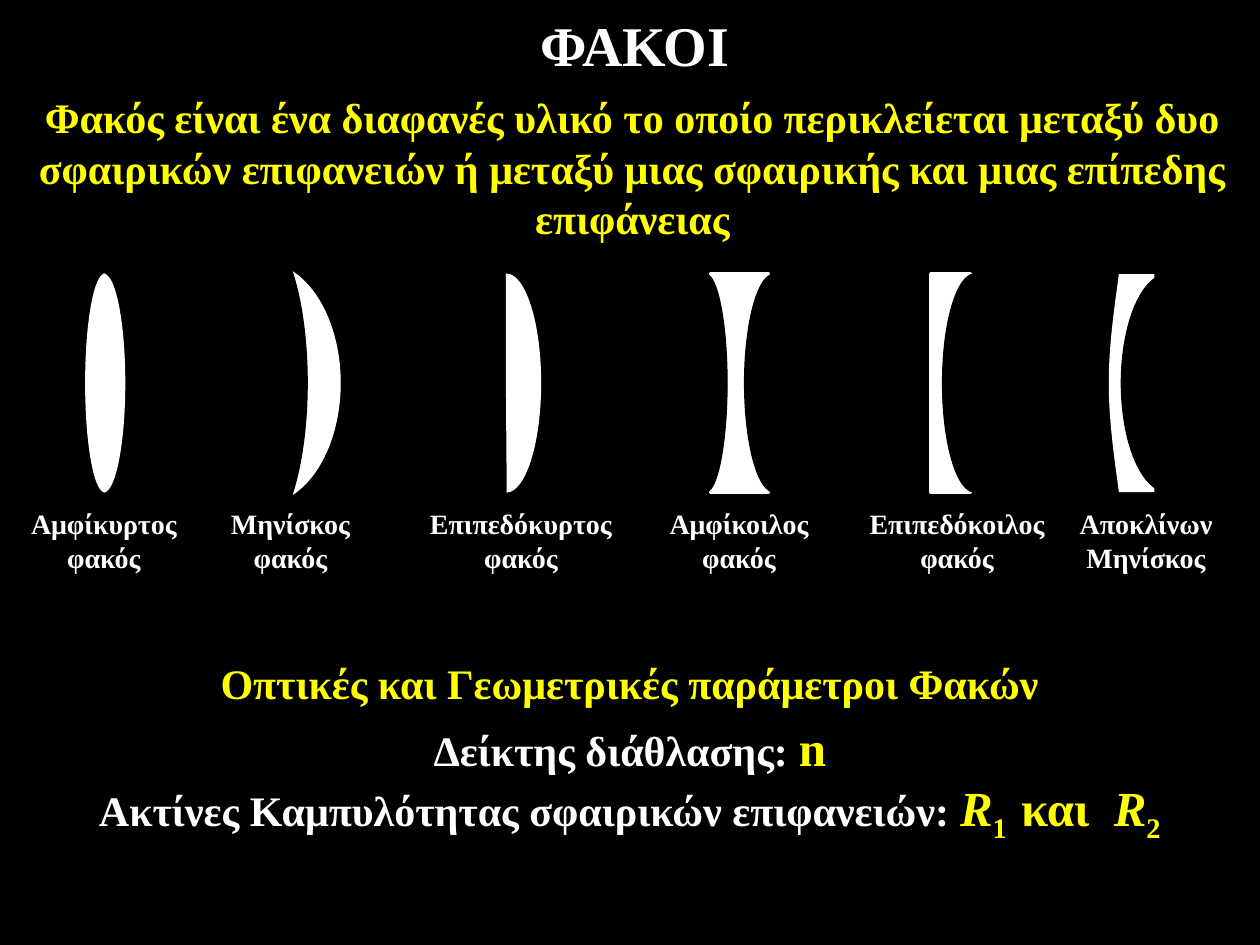
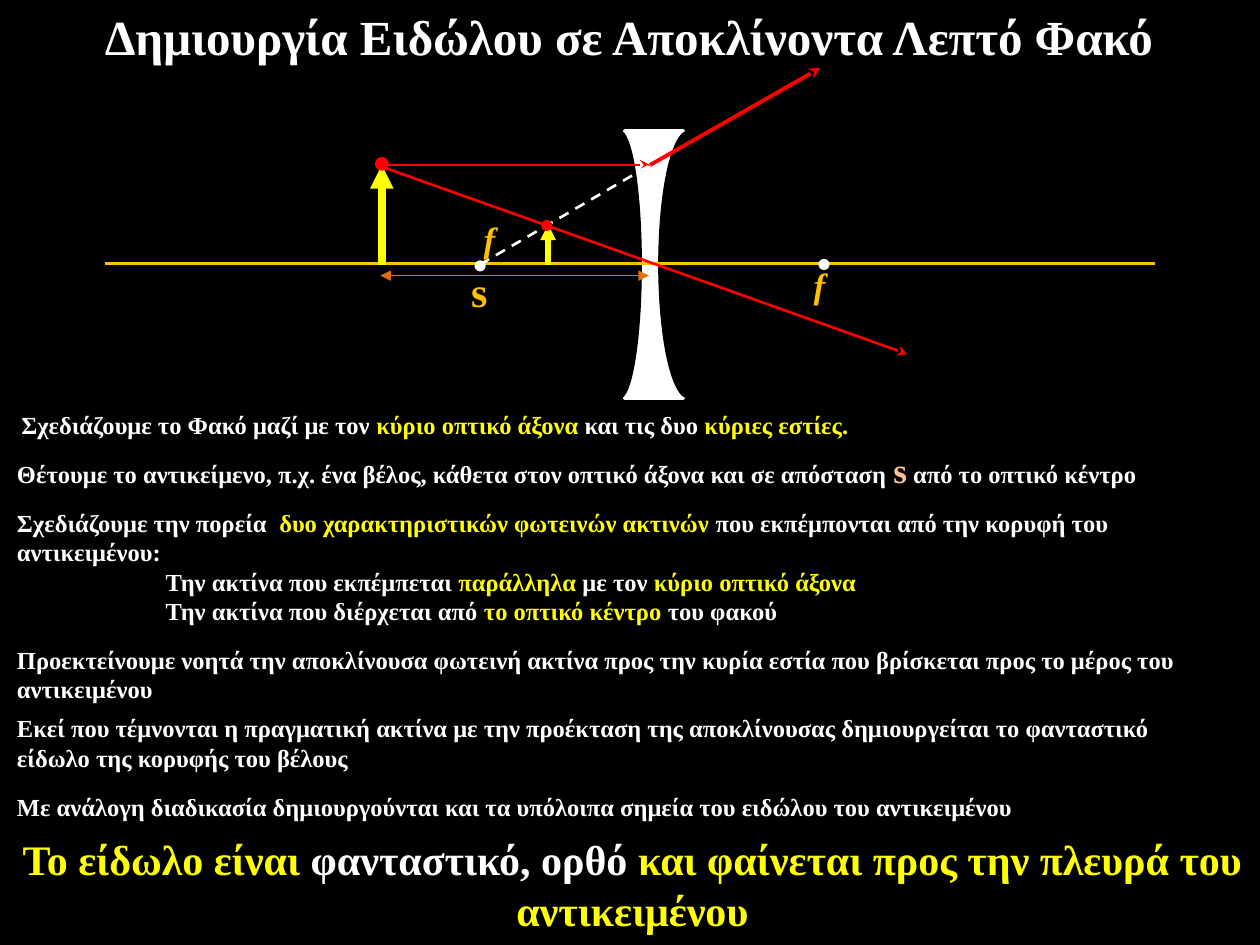
from dataclasses import dataclass

from lxml import etree
from pptx import Presentation
from pptx.dml.color import RGBColor
from pptx.enum import dml, shapes, text
from pptx.oxml.ns import qn
from pptx.util import Pt


@dataclass(frozen=True)
class Theme:
    font: str = "Times New Roman"
    black: str = "000000"
    white: str = "FFFFFF"
    yellow: str = "FFFF00"
    gold: str = "FFC000"
    orange: str = "E46C0A"
    peach: str = "FAC090"
    red: str = "FF0000"
    title: int = 32
    long_title: int = 28
    heading: int = 24
    symbol: int = 28
    focus: int = 20
    label: int = 16
    step: int = 14


theme = Theme()
CENTER, LEFT = text.PP_ALIGN.CENTER, text.PP_ALIGN.LEFT


def write(box, area, paragraphs, size, align=LEFT, wrap=True, anchor=text.MSO_ANCHOR.TOP):
    """Place a box and fill it. A paragraph is (space before, indent, spans);
    a span is (words, colour, options)."""
    box.left, box.top, box.width, box.height = [Pt(v) for v in area]
    frame = box.text_frame
    frame.word_wrap = wrap
    frame.auto_size = text.MSO_AUTO_SIZE.NONE
    frame.vertical_anchor = anchor
    for number, (space, indent, spans) in enumerate(paragraphs):
        para = frame.add_paragraph() if number else frame.paragraphs[0]
        para.alignment = align
        para.space_before = Pt(space)
        props = para._p.get_or_add_pPr()
        props.set("marL", str(Pt(indent)))
        props.set("indent", "0")
        etree.SubElement(props, qn("a:buNone"))
        for words, colour, *options in spans:
            look = options[0] if options else {}
            span = para.add_run()
            span.text = words
            for font in (para.font, span.font):
                font.name, font.bold = theme.font, True
            span.font.size = Pt(look.get("size", size))
            span.font.italic = look.get("italic", False)
            span.font.color.rgb = RGBColor.from_string(colour)
            if "baseline" in look:
                span.font._element.set("baseline", str(look["baseline"]))


def add_part(page, form, left, top, width, height, colour, outline=0.75):
    """Add a filled rectangle, ellipse, right half-ellipse (arc) or left one (flip)."""
    kinds = {"rect": shapes.MSO_SHAPE.RECTANGLE, "dot": shapes.MSO_SHAPE.OVAL}
    part = page.shapes.add_shape(kinds.get(form, shapes.MSO_SHAPE.ARC),
                                 Pt(left), Pt(top), Pt(width), Pt(height))
    part.shadow.inherit = False
    part.fill.solid()
    part.fill.fore_color.rgb = RGBColor.from_string(colour)
    if outline:
        part.line.color.rgb = RGBColor.from_string(colour)
        part.line.width = Pt(outline)
    else:
        part.line.fill.background()
    if form in ("arc", "flip"):
        part.adjustments[0], part.adjustments[1] = 162, 53.741
    if form == "flip":
        part._element.spPr.find(qn("a:xfrm")).set("flipH", "1")


# Deck with a black master
deck = Presentation()
deck.slide_width, deck.slide_height = Pt(720), Pt(540)
backdrop = deck.slide_master.background.fill
backdrop.solid()
backdrop.fore_color.rgb = RGBColor.from_string(theme.black)

# Pages with their titles
pages = []
for words, size, area in [
    ("ΦΑΚΟΙ", theme.title, (2.9, 1.4, 720, 47.5)),
    ("Δημιουργία Ειδώλου σε Αποκλίνοντα Λεπτό Φακό", theme.long_title, (-0.7, 1.4, 720, 38.2)),
]:
    page = deck.slides.add_slide(deck.slide_layouts[1])
    write(page.shapes.title, area, [(0, 0, [(words, theme.white)])], size, CENTER,
          anchor=text.MSO_ANCHOR.MIDDLE)
    pages.append(page)
lens_page, image_page = pages

# Slide 1: definition
write(lens_page.shapes.add_textbox(0, 0, 0, 0), (2.9, 49, 717, 89.3), [(0, 0, [(
    "Φακός είναι ένα διαφανές υλικό το οποίο περικλείεται μεταξύ δυο σφαιρικών "
    "επιφανειών ή μεταξύ μιας σφαιρικής και μιας επίπεδης επιφάνειας", theme.yellow)])],
    theme.heading, CENTER)

# Slide 1: lens outlines, as form, left, top, width, height, colour, outline
LENS_TOP, LENS_HEIGHT = 156.6, 124.6
biconcave = [("rect", 406.1, 33.1, theme.white, 2),
             ("arc", 391, 24.5, theme.black, 0.75),
             ("flip", 425.5, 33.8, theme.black, 0.75)]
add_part(lens_page, "arc", 105.1, 149.8, 89.3, 138.2, theme.white)
add_part(lens_page, "arc", 120.2, 131, 55.4, 175.7, theme.black)
for form, left, width, colour, outline in [
    ("arc", 46.8, 24.5, theme.white, 0.75),
    ("flip", 49, 22.3, theme.white, 0.75),
    ("arc", 269.3, 39.6, theme.white, 0.75),
    *biconcave,
    ("rect", 532.1, 22.3, theme.white, 2),
    ("flip", 538.6, 36.7, theme.black, 0.75),
    ("rect", 639.4, 20.2, theme.white, 0),
]:
    add_part(lens_page, form, left, LENS_TOP, width, LENS_HEIGHT, colour, outline)

# Slide 1: curved sides of the diverging meniscus
for edge, depth, colour in [(661, 19.5, theme.black), (639.4, 5.8, theme.white)]:
    curve = []
    for step in range(41):
        t = 1 - abs(step / 20 - 1)
        curve.append((Pt(edge - depth * (1.5 * t - 0.5 * t ** 3)),
                      Pt(LENS_TOP + LENS_HEIGHT * step / 40)))
    builder = lens_page.shapes.build_freeform(*curve[0], scale=1.0)
    builder.add_line_segments(curve[1:], close=True)
    side = builder.convert_to_shape()
    side.shadow.inherit = False
    side.fill.solid()
    side.fill.fore_color.rgb = RGBColor.from_string(colour)
    side.line.fill.background()
for form, left, width in [("arc", 635, 59), ("flip", 640.8, 53.3)]:
    add_part(lens_page, form, left, LENS_TOP, width, LENS_HEIGHT, theme.black)

# Slide 1: lens names
for words, left, width in [
    ("Αμφίκυρτος φακός", 8.6, 101.5),
    ("Μηνίσκος φακός", 115.2, 101.5),
    ("Επιπεδόκυρτος φακός", 235.4, 124.6),
    ("Αμφίκοιλος φακός", 371.5, 101.5),
    ("Επιπεδόκοιλος φακός", 484.6, 124.6),
    ("Αποκλίνων Μηνίσκος", 604.1, 101.5),
]:
    write(lens_page.shapes.add_textbox(0, 0, 0, 0), (left, 286, width, 46),
          [(0, 0, [(words, theme.white)])], theme.label, CENTER)

# Slide 1: lens parameters
symbol = {"size": theme.symbol}
slanted = {**symbol, "italic": True}
lowered = {**symbol, "baseline": -25000}
write(lens_page.placeholders[1], (1.4, 372.2, 717, 107.3), [
    (0, 0, [("Οπτικές και Γεωμετρικές παράμετροι Φακών", theme.yellow)]),
    (5.2, 0, [("Δείκτης διάθλασης: ", theme.white), ("n", theme.yellow, symbol)]),
    (0.8, 0, [("Ακτίνες Καμπυλότητας σφαιρικών επιφανειών: ", theme.white),
              ("R", theme.yellow, slanted), ("1  ", theme.yellow, lowered),
              ("και  ", theme.yellow, symbol),
              ("R", theme.yellow, slanted), ("2", theme.yellow, lowered)]),
], theme.heading, CENTER)

# Slide 2: the biconcave lens, taller
for form, left, width, colour, outline in biconcave:
    add_part(image_page, form, left - 49, 74.9, width, 152.6, colour, outline)

# Slide 2: axis, arrows and rays, as start, end, colour, width, ends
for start, end, colour, width, ends in [
    ((59.8, 150.5), (660.2, 150.5), theme.gold, 1.5, {}),
    ((313.2, 151.2), (313.2, 128.2), theme.yellow, 3, {"tailEnd": "triangle"}),
    ((218.2, 151.2), (218.2, 94.3), theme.yellow, 4.5, {"tailEnd": "triangle"}),
    ((217.4, 157.5), (370.8, 157.5), theme.orange, 0.75,
     {"headEnd": "triangle", "tailEnd": "triangle"}),
    ((218.2, 94.3), (371.5, 94.3), theme.red, 1.5, {"tailEnd": "stealth"}),
    ((371.5, 94.3), (468.7, 38.9), theme.red, 2.25, {"tailEnd": "stealth"}),
    ((219.6, 95.8), (518.4, 202.3), theme.red, 1.5, {"tailEnd": "stealth"}),
    ((274.3, 151.2), (371.5, 94.3), theme.white, 1.5, {"dash": True}),
]:
    line = image_page.shapes.add_connector(
        shapes.MSO_CONNECTOR.STRAIGHT, *[Pt(v) for v in start + end])
    line.line.color.rgb = RGBColor.from_string(colour)
    line.line.width = Pt(width)
    if "dash" in ends:
        line.line.dash_style = dml.MSO_LINE.DASH
    for tag in ("headEnd", "tailEnd"):
        if tag in ends:
            etree.SubElement(line.line._get_or_add_ln(), qn("a:" + tag), type=ends[tag])
    etree.SubElement(line._element.spPr, qn("a:effectLst"))

# Slide 2: foci, object tip and image tip
for left, top, size, colour in [
    (272.2, 149.8, 4.3, theme.white),
    (468.7, 149, 4.3, theme.white),
    (215.3, 90.7, 5.8, theme.red),
    (310.3, 126.7, 4.3, theme.red),
]:
    add_part(image_page, "dot", left, top, size, size, colour, 2)

# Slide 2: symbols on the axis
for words, size, italic, area in [
    ("f", theme.focus, True, (269.3, 121, 20.9, 31.7)),
    ("f", theme.focus, True, (457.9, 146.9, 20.9, 31.7)),
    ("s", theme.heading, False, (262.1, 148.3, 23.8, 36)),
]:
    write(image_page.shapes.add_textbox(0, 0, 0, 0), area,
          [(0, 0, [(words, theme.gold, {"italic": italic})])], size, wrap=False)

# Slide 2: construction steps
white, yellow = theme.white, theme.yellow
write(image_page.placeholders[1], (2.5, 230.4, 691, 246), [
    (0, 2.5, [("Σχεδιάζουμε το Φακό μαζί με τον ", white), ("κύριο οπτικό άξονα ", yellow),
              ("και τις δυο ", white), ("κύριες εστίες.", yellow)]),
    (5.5, 0, [("Θέτουμε το αντικείμενο, π.χ. ένα βέλος, κάθετα στον οπτικό άξονα "
               "και σε απόσταση ", white),
              ("s", theme.peach, {"size": theme.focus}),
              (" από το οπτικό κέντρο", white)]),
    (9.8, 0, [("Σχεδιάζουμε την πορεία  ", white),
              ("δυο χαρακτηριστικών φωτεινών ακτινών ", yellow),
              ("που εκπέμπονται από την κορυφή του αντικειμένου:", white)]),
    (0, 85, [("Την ακτίνα που εκπέμπεται ", white), ("παράλληλα", yellow),
             (" με τον ", white), ("κύριο οπτικό άξονα", yellow)]),
    (0, 85, [("Την ακτίνα που διέρχεται από ", white), ("το οπτικό κέντρο ", yellow),
             ("του φακού", white)]),
    (11, 0, [("Προεκτείνουμε νοητά την αποκλίνουσα φωτεινή ακτίνα προς την κυρία "
              "εστία που βρίσκεται προς το μέρος του αντικειμένου", white)]),
    (5.7, 0, [("Εκεί που τέμνονται η πραγματική ακτίνα με την προέκταση της αποκλίνουσας "
               "δημιουργείται το φανταστικό είδωλο της κορυφής του βέλους", white)]),
    (11.5, 0, [("Με ανάλογη διαδικασία δημιουργούνται και τα υπόλοιπα σημεία του "
                "ειδώλου του αντικειμένου", white)]),
], theme.step)

# Slide 2: conclusion
write(image_page.shapes.add_textbox(0, 0, 0, 0), (2.9, 473, 717, 63.4), [(0, 0, [
    ("Το είδωλο είναι ", yellow), ("φανταστικό, ορθό ", white),
    ("και φαίνεται προς την πλευρά του αντικειμένου", yellow)])], theme.heading, CENTER)

deck.save("out.pptx")
